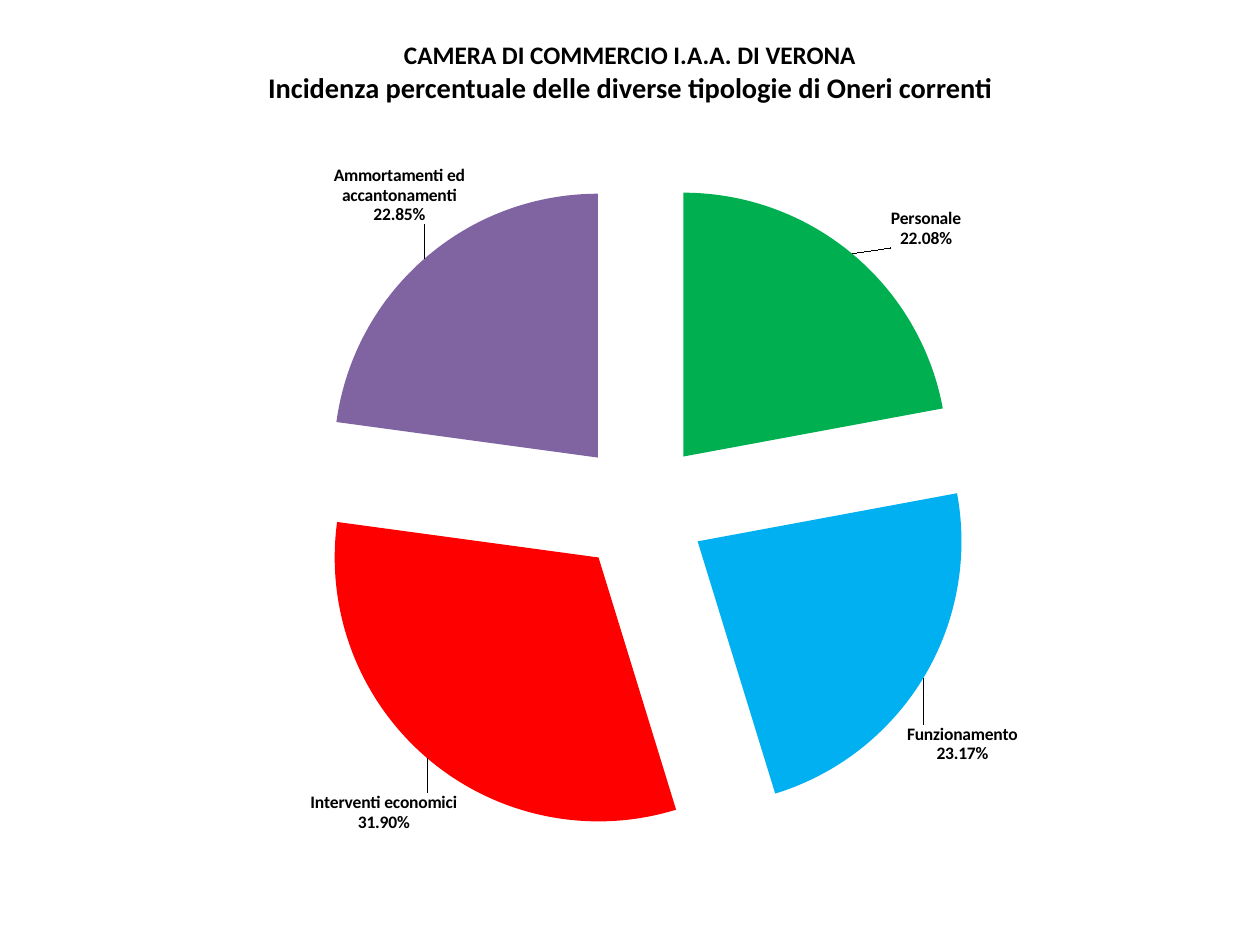
from copy import deepcopy
from dataclasses import dataclass

from lxml import etree
from pptx import Presentation
from pptx.chart.data import CategoryChartData
from pptx.dml.color import RGBColor
from pptx.enum.chart import XL_CHART_TYPE, XL_LABEL_POSITION
from pptx.enum.text import MSO_ANCHOR, MSO_AUTO_SIZE, PP_ALIGN
from pptx.oxml import parse_xml
from pptx.oxml.ns import nsdecls, qn
from pptx.util import Cm, Pt

PIE = XL_CHART_TYPE.PIE
OUT_END = XL_LABEL_POSITION.OUTSIDE_END
MIDDLE = MSO_ANCHOR.MIDDLE
NO_FIT = MSO_AUTO_SIZE.NONE
CENTER = PP_ALIGN.CENTER

BLACK = RGBColor(0x00, 0x00, 0x00)
GREEN = RGBColor(0x00, 0xB0, 0x50)
BLUE = RGBColor(0x00, 0xB0, 0xF0)
RED = RGBColor(0xFF, 0x00, 0x00)
PURPLE = RGBColor(0x80, 0x64, 0xA2)
FONT = "Calibri"
LEFT, WIDTH = Cm(1.27), Cm(22.86)


@dataclass
class Slice:
    name: str
    share: float
    color: RGBColor
    dx: float  # label shift, as a part of the chart's width
    dy: float  # label shift, as a part of the chart's height


SLICES = [
    Slice("Personale", 22.08, GREEN, 0.03, 0),
    Slice("Funzionamento", 23.17, BLUE, -0.02, 0.06),
    Slice("Interventi economici", 31.90, RED, 0.03, 0.04),
    Slice("Ammortamenti ed accantonamenti", 22.85, PURPLE, 0.04, -0.04),
]


def style(font, size: float, bold: bool = False) -> None:
    font.name, font.size, font.bold = FONT, Pt(size), bold
    font.color.rgb = BLACK


def add_text(para, text: str, *, size: float, bold: bool = False) -> None:
    run = para.add_run()
    run.text = text
    style(run.font, size, bold)


def layout(x: float, y: float, size: str = "") -> etree._Element:
    """Manual layout; size holds extra parts for a plot area."""
    target = '<c:layoutTarget val="inner"/>' if size else ""
    mode = '<c:xMode val="edge"/><c:yMode val="edge"/>' if size else ""
    return parse_xml(
        f'<c:layout {nsdecls("c")}><c:manualLayout>{target}{mode}'
        f'<c:x val="{x}"/><c:y val="{y}"/>{size}</c:manualLayout></c:layout>'
    )


def add_labels(series, slices: list[Slice]) -> None:
    labels = series.data_labels
    labels.show_value = False
    labels.show_category_name = labels.show_percentage = True
    labels.number_format = "0.00%"
    labels.number_format_is_linked = False
    labels.position = OUT_END
    style(labels.font, 10, True)

    root = series._element.find(qn("c:dLbls"))
    root.find(qn("c:showLeaderLines")).set("val", "1")
    gap = parse_xml(f'<c:separator {nsdecls("c")}>\n</c:separator>')
    root.find(qn("c:showBubbleSize")).addnext(gap)
    shared = [part for part in root if part.tag != qn("c:showLeaderLines")]
    for i, item in enumerate(slices):
        label = parse_xml(f'<c:dLbl {nsdecls("c")}><c:idx val="{i}"/></c:dLbl>')
        label.append(layout(item.dx, item.dy))
        label.extend(deepcopy(part) for part in shared)
        root.insert(i, label)


def add_pie(slide, slices: list[Slice]) -> None:
    data = CategoryChartData(number_format="0.00")
    data.categories = [item.name for item in slices]
    data.add_series("Series 1", [item.share for item in slices])
    frame = slide.shapes.add_chart(PIE, LEFT, Cm(2.72), WIDTH, Cm(14.3), data)
    chart = frame.chart
    chart.has_title = chart.has_legend = False
    style(chart.font, 10)

    area = chart._chartSpace.find(".//" + qn("c:plotArea"))
    old = area.find(qn("c:layout"))
    if old is not None:
        area.remove(old)
    area.insert(0, layout(0.04, 0.06, '<c:w val="0.94"/><c:h val="0.93"/>'))

    plot = chart.plots[0]
    plot.vary_by_categories = True
    series = plot.series[0]
    for i, item in enumerate(slices):
        fill = series.points[i].format.fill
        fill.solid()
        fill.fore_color.rgb = item.color
    split = parse_xml(f'<c:explosion {nsdecls("c")} val="25"/>')
    series._element.find(qn("c:dPt")).addprevious(split)
    add_labels(series, slices)


def add_title(slide) -> None:
    title = slide.shapes.title
    title.left, title.top = LEFT, Cm(0.76)
    title.width, title.height = WIDTH, Cm(1.37)
    frame = title.text_frame
    frame.word_wrap = True
    frame.auto_size = NO_FIT
    frame.vertical_anchor = MIDDLE
    para = frame.paragraphs[0]
    para.alignment = CENTER
    add_text(para, "CAMERA DI COMMERCIO I.A.A. DI VERONA", size=14.4, bold=True)
    para.add_line_break()
    add_text(
        para,
        "Incidenza percentuale delle diverse tipologie di Oneri correnti",
        size=16.2,
        bold=True,
    )


def main() -> None:
    deck = Presentation()
    deck.slide_width, deck.slide_height = Cm(25.4), Cm(19.05)
    slide = deck.slides.add_slide(deck.slide_layouts[5])
    add_title(slide)
    add_pie(slide, SLICES)
    deck.save("out.pptx")


if __name__ == "__main__":
    main()
